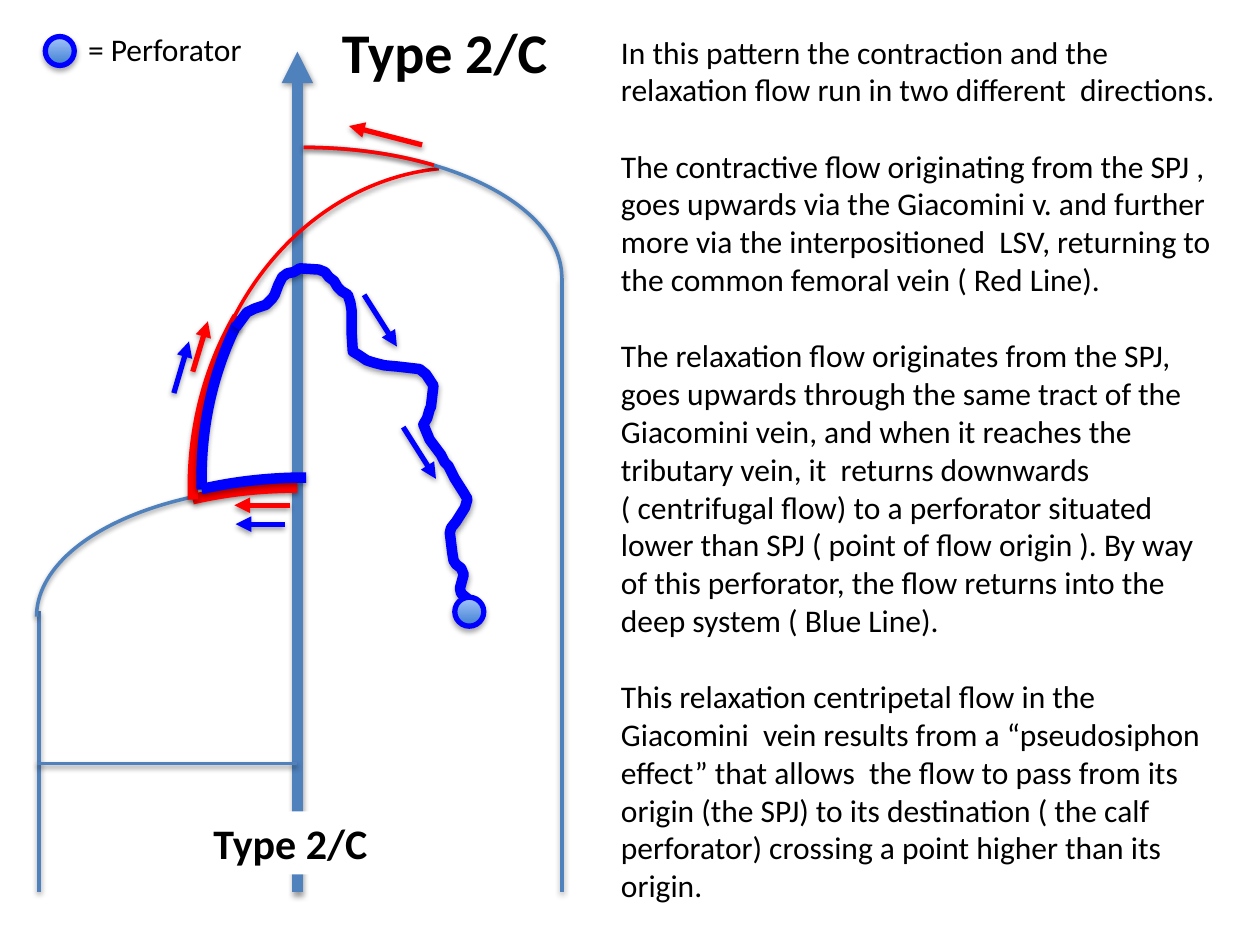
from pptx import Presentation
from pptx.dml.color import RGBColor
from pptx.enum.shapes import MSO_CONNECTOR, MSO_SHAPE
from pptx.enum.text import MSO_AUTO_SIZE, PP_ALIGN
from pptx.oxml import parse_xml
from pptx.oxml.ns import nsdecls
from pptx.util import Inches, Pt

STRAIGHT = MSO_CONNECTOR.STRAIGHT
ARC, OVAL, RECT = MSO_SHAPE.ARC, MSO_SHAPE.OVAL, MSO_SHAPE.RECTANGLE
CENTER, LEFT = PP_ALIGN.CENTER, PP_ALIGN.LEFT
NO_RESIZE = MSO_AUTO_SIZE.NONE

COLS, ROWS = 1000, 750
CELL = Inches(10) // COLS
FONT = "Calibri"
COLORS = {
    "vein": "4F81BD", "red": "FF0000", "blue": "0000FF", "text": "000000",
    "paper": "FFFFFF", "dot_dark": "3F80CE", "dot_light": "A4C4FF",
}
QUARTER = (162, 0)  # arc from the top to the side

# box, mirrored, start and end of the arc, colour, width
RED_LOOP = ((156, 133, 422, 487), True, (164.644, 1.629), "red", 2)
UPPER_VEIN = ((36, 117, 410, 207), False, QUARTER, "vein", 2)
LOWER_VEIN = ((29, 386, 410, 207), True, QUARTER, "vein", 2)
RED_FLOW = [
    ((35, 387, 402, 206), True, (162, 186.925), "red", 6),
    ((153, 143, 422, 487), True, (193.416, 1.629), "red", 6),
]
BLUE_FLOW = [
    ((160, 135, 422, 487), True, (195.958, 1.629), "blue", 6),
    ((42, 379, 402, 206), True, (162, 186.925), "blue", 6),
]
RED_RETURN = ((36, 117, 410, 207), False, (162, 191.501), "red", 2)

# start and end of each line
TRUNKS = [(446, 221, 446, 708), (31, 485, 31, 708), (29, 606, 236, 606)]
ARROWS = {
    "red": [(230, 401, 186, 401), (153, 295, 165, 255), (335, 115, 277, 100)],
    "blue": [(138, 312, 150, 271), (226, 416, 187, 416),
             (320, 339, 346, 380), (289, 234, 315, 275)],
}
TRIBUTARY = [
    (187, 260), (193, 252), (196, 248), (202, 245), (211, 242), (216, 237),
    (218, 234), (221, 226), (224, 220), (228, 217), (233, 216), (238, 213),
    (253, 214), (258, 216), (261, 220), (265, 223), (268, 228), (271, 231),
    (276, 234), (278, 240), (279, 246), (279, 263), (280, 279), (285, 282),
    (291, 286), (297, 288), (305, 290), (316, 291), (333, 293), (338, 297),
    (344, 306), (342, 323), (341, 325), (339, 332), (336, 337), (341, 349),
    (350, 361), (353, 367), (356, 370), (361, 380), (368, 391), (371, 396),
    (369, 403), (362, 414), (358, 419), (357, 423), (359, 439), (360, 445),
    (362, 448), (366, 451), (368, 456), (365, 467), (366, 471), (372, 476),
]
COMMENTARY = [
    "In this pattern the contraction and the relaxation flow run in two "
    "different  directions.",
    "The contractive flow originating from the SPJ , goes upwards via the "
    "Giacomini v. and further more via the interpositioned  LSV, returning "
    "to the common femoral vein ( Red Line).",
    "The relaxation flow originates from the SPJ, goes upwards through the "
    "same tract of the Giacomini vein, and when it reaches the tributary "
    "vein, it  returns downwards ( centrifugal flow) to a perforator "
    "situated lower than SPJ ( point of flow origin ). By way of this "
    "perforator, the flow returns into the deep system ( Blue Line).",
    "This relaxation centripetal flow in the Giacomini  vein results from a "
    "“pseudosiphon effect” that allows  the flow to pass from its origin "
    "(the SPJ) to its destination ( the calf perforator) crossing a point "
    "higher than its origin.",
]


def rgb(name):
    return RGBColor.from_string(COLORS[name])


def inside(box, part):
    """Turn a part's cells, counted from the box's corner, into lengths."""
    x, y, w, h = part
    return [n * CELL for n in (box[0] + x, box[1] + y, w, h)]


def outline(sp, color, width, arrow=None, alpha=38, dist=1.6):
    """Set line, arrowhead ("headEnd" or "tailEnd") and soft shadow."""
    sp.line.color.rgb = rgb(color)
    sp.line.width = Pt(width)
    if arrow:
        sp.line._get_or_add_ln().append(
            parse_xml(f'<a:{arrow} {nsdecls("a")} type="triangle"/>'))
    sp._element.spPr.append(parse_xml(
        f'<a:effectLst {nsdecls("a")}><a:outerShdw blurRad="{Pt(3.1)}" '
        f'dist="{Pt(dist)}" dir="5400000" rotWithShape="0">'
        f'<a:srgbClr val="000000"><a:alpha val="{alpha * 1000}"/></a:srgbClr>'
        '</a:outerShdw></a:effectLst>'))


def add_line(s, box, ends, color, width, arrow=None):
    x1, y1, x2, y2 = inside(box, ends[:2] + (0, 0))[:2] + inside(
        box, ends[2:] + (0, 0))[:2]
    outline(s.shapes.add_connector(STRAIGHT, x1, y1, x2, y2),
            color, width, arrow)


def add_arc(s, box, part, mirrored, angles, color, width):
    sp = s.shapes.add_shape(ARC, *inside(box, part))
    for i, angle in enumerate(angles):
        sp.adjustments[i] = angle
    if mirrored:
        sp._element.spPr.xfrm.set("flipH", "1")
    sp.fill.background()
    outline(sp, color, width)


def add_perforator(s, box, x, y):
    sp = s.shapes.add_shape(OVAL, *inside(box, (x, y, 23, 23)))
    sp.fill.gradient()
    sp.fill.gradient_angle = 90
    for stop, name in zip(sp.fill.gradient_stops, ("dot_dark", "dot_light")):
        stop.color.rgb = rgb(name)
    outline(sp, "blue", 3, alpha=35, dist=1.8)


def add_tributary(s, box):
    points = [(box[0] + x, box[1] + y) for x, y in TRIBUTARY]
    builder = s.shapes.build_freeform(*points[0], scale=CELL)
    builder.add_line_segments(points[1:], close=False)
    sp = builder.convert_to_shape()
    sp.fill.background()
    outline(sp, "blue", 6)
    sp.line._get_or_add_ln().append(parse_xml(f'<a:round {nsdecls("a")}/>'))


def write(sp, texts, size, bold=False, align=LEFT, wrap=False, gap=0):
    tf = sp.text_frame
    for name, value in {"word_wrap": wrap, "auto_size": NO_RESIZE}.items():
        setattr(tf, name, value)
    for i, text in enumerate(texts):
        p = tf.add_paragraph() if i else tf.paragraphs[0]
        p.alignment = align
        p.space_before = Pt(gap if i else 0)
        r = p.add_run()
        r.text = text
        for name, value in {"name": FONT, "size": Pt(size),
                            "bold": bold}.items():
            setattr(r.font, name, value)
        r.font.color.rgb = rgb("text")


def add_type_label(s, box, part):
    """Put the name on a plain plate that interrupts the deep vein."""
    sp = s.shapes.add_shape(RECT, *inside(box, part))
    sp.shadow.inherit = False
    sp.fill.solid()
    sp.fill.fore_color.rgb = rgb("paper")
    sp.line.fill.background()
    write(sp, ["Type 2/C"], 24, bold=True, align=CENTER)


def add_diagram(s, box):
    add_line(s, box, (236, 41, 236, 708), "vein", 6, "headEnd")
    for arc in (RED_LOOP, UPPER_VEIN):
        add_arc(s, box, *arc)
    for ends in TRUNKS:
        add_line(s, box, ends, "vein", 2)
    for arc in [LOWER_VEIN] + RED_FLOW:
        add_arc(s, box, *arc)
    title = s.shapes.add_textbox(*inside(box, (260, 9, 186, 64)))
    write(title, ["Type 2/C"], 32, bold=True, align=CENTER)
    add_type_label(s, box, (158, 644, 145, 50))
    for arc in BLUE_FLOW:
        add_arc(s, box, *arc)
    add_tributary(s, box)
    add_perforator(s, box, 361, 474)
    add_arc(s, box, *RED_RETURN)
    for color, arrows in ARROWS.items():
        for ends in arrows:
            add_line(s, box, ends, color, 3, "tailEnd")


def add_legend(s, box):
    add_perforator(s, box, 0, 10)
    label = s.shapes.add_textbox(*inside(box, (24, 0, 145, 40)))
    write(label, ["= Perforator"], 18)


def add_commentary(s, box):
    sp = s.shapes.add_textbox(*inside(box, (0, 0) + box[2:]))
    write(sp, COMMENTARY, 18, wrap=True, gap=22)


def main():
    prs = Presentation()
    prs.slide_width, prs.slide_height = COLS * CELL, ROWS * CELL
    s = prs.slides.add_slide(prs.slide_layouts[6])
    add_diagram(s, (0, 0, 480, ROWS))
    add_legend(s, (36, 19, 169, 40))
    add_commentary(s, (483, 21, 499, 707))
    prs.save("out.pptx")


if __name__ == "__main__":
    main()
